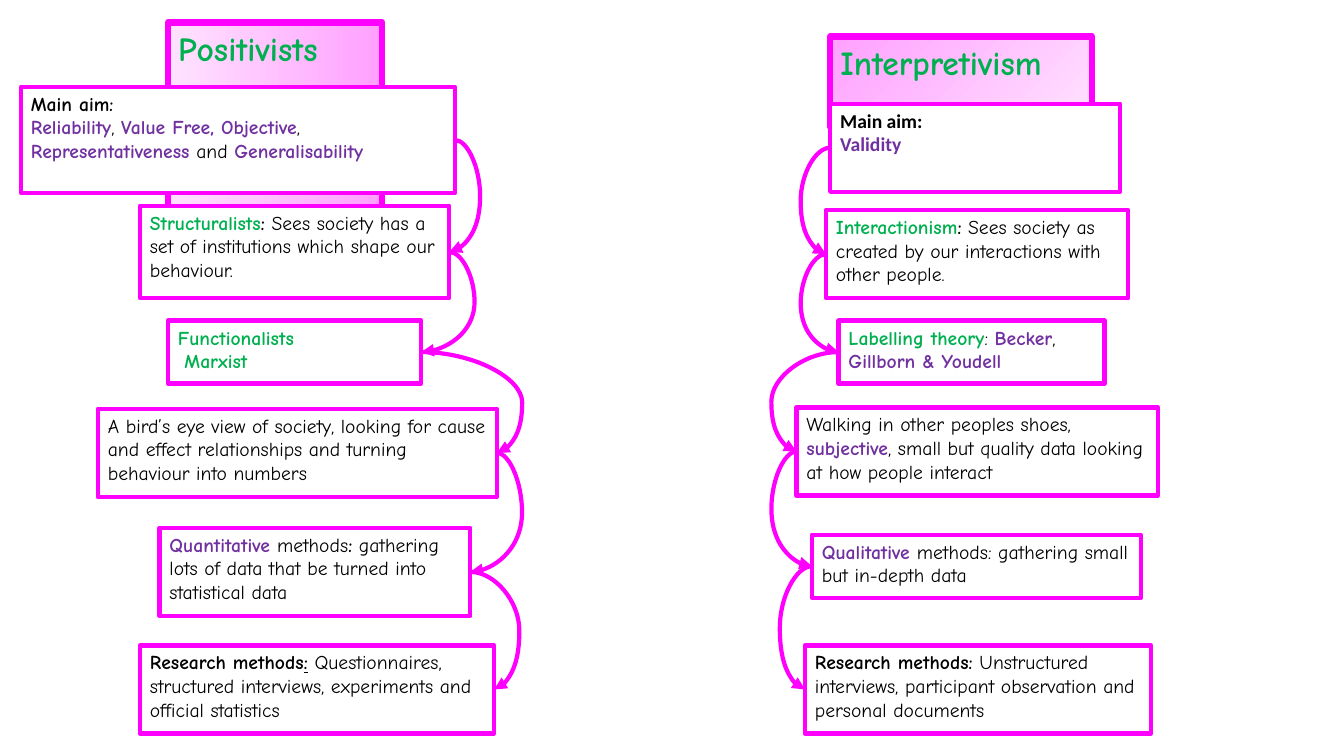
from lxml.etree import SubElement
from pptx import Presentation
from pptx.dml.color import RGBColor
from pptx.enum.shapes import MSO_CONNECTOR as Link, MSO_SHAPE as Geom
from pptx.enum.text import MSO_ANCHOR as Anchor, MSO_AUTO_SIZE as Fit, PP_ALIGN as Align
from pptx.oxml.ns import qn
from pptx.util import Pt

PINK = RGBColor(0xFF, 0x00, 0xFF)
ROSE = RGBColor(0xFF, 0xA0, 0xFF)
PALE = RGBColor(0xFF, 0xE3, 0xFF)
WHITE = RGBColor(0xFF, 0xFF, 0xFF)
BLACK = RGBColor(0x00, 0x00, 0x00)
GREEN = RGBColor(0x00, 0xB0, 0x50)
PURPLE = RGBColor(0x70, 0x30, 0xA0)
COMIC, PLAIN = "Comic Neue", "Calibri"
BULGE = Pt(18)
RIGHT, LEFT = 3, 1

# Run styles: colour, bold
TERM = (GREEN, True)
KEY = (PURPLE, True)
STRONG = (BLACK, True)
BODY = (BLACK, False)
UNDER = (BLACK, True, True)

# Each box: left, top, width, height, font, paragraphs of (text, style) runs
POSITIVE = [
    (15, 62, 310, 76, COMIC, [
        [("Main aim:", STRONG)],
        [("Reliability", KEY), (", ", BODY), ("Value Free, Objective", KEY), (", ", BODY),
         ("Representativeness", KEY), (" and ", BODY), ("Generalisability", KEY)]]),
    (100, 147, 221, 66, COMIC, [
        [("Structuralists", TERM), (":", STRONG),
         (" Sees society has a set of institutions which shape our behaviour.", BODY)]]),
    (120, 229, 181, 45, COMIC, [
        [("Functionalists", TERM)], [(" ", BODY), ("Marxist", TERM)]]),
    (70, 292, 285, 63, COMIC, [
        [("A bird’s eye view of society, looking for cause and effect relationships "
          "and turning behaviour into numbers", BODY)]]),
    (114, 377, 222, 63, COMIC, [
        [("Quantitative ", KEY), ("methods", BODY), (":", STRONG),
         (" gathering lots of data that be turned into statistical data", BODY)]]),
    (100, 461, 253, 63, COMIC, [
        [("Research methods", STRONG), (":", UNDER),
         (" Questionnaires, structured interviews, experiments and official statistics", BODY)]]),
]
INTERPRET = [
    (593, 74, 207, 63, PLAIN, [[("Main aim:", STRONG)], [("Validity", KEY)]]),
    (590, 150, 216, 63, COMIC, [
        [("Interactionism", TERM), (":", STRONG),
         (" Sees society as created by our interactions with other people.", BODY)]]),
    (599, 229, 190, 45, COMIC, [
        [("Labelling theory", TERM), (": ", BODY), ("Becker", KEY), (", ", BODY),
         ("Gillborn & Youdell", KEY)]]),
    (569, 291, 258, 63, COMIC, [
        [("Walking in other peoples shoes, ", BODY), ("subjective", KEY),
         (", small but quality data looking at how people interact", BODY)]]),
    (580, 382, 235, 45, COMIC, [
        [("Qualitative ", KEY), ("methods: gathering small but in-depth data", BODY)]]),
    (575, 461, 247, 63, COMIC, [
        [("Research methods:", STRONG),
         (" Unstructured interviews, participant observation and personal documents", BODY)]]),
]


def place(shape, left, top, width, height):
    shape.left, shape.top = Pt(left), Pt(top)
    shape.width, shape.height = Pt(width), Pt(height)


def outline(shape, width):
    shape.line.color.rgb = PINK
    shape.line.width = Pt(width)


def add_head(holder, text, area, angle):
    """Turn a placeholder into a framed column heading."""
    place(holder, *area)
    outline(holder, 4.5)
    holder.fill.gradient()
    holder.fill.gradient_angle = angle
    for stop, tone in zip(holder.fill.gradient_stops, (ROSE, PALE)):
        stop.color.rgb = tone
    frame = holder.text_frame
    frame.text = text
    frame.auto_size = Fit.SHAPE_TO_FIT_TEXT
    frame.vertical_anchor = Anchor.TOP
    para = frame.paragraphs[0]
    para.alignment = Align.LEFT
    para.space_before = Pt(0)
    font = para.font
    font.name, font.size, font.bold = COMIC, Pt(24), True
    font.color.rgb = GREEN


def add_run(para, text, tone, bold, under=None):
    run = para.add_run()
    run.text = text
    run.font.color.rgb = tone
    run.font.bold = bold
    run.font.underline = under


def add_box(slide, left, top, width, height, face, paras):
    box = slide.shapes.add_shape(Geom.RECTANGLE, Pt(left), Pt(top), Pt(width), Pt(height))
    box.shadow.inherit = False
    box.fill.solid()
    box.fill.fore_color.rgb = WHITE
    outline(box, 3)
    frame = box.text_frame
    frame.word_wrap = True
    frame.vertical_anchor = Anchor.TOP
    for i, runs in enumerate(paras):
        para = frame.add_paragraph() if i else frame.paragraphs[0]
        para.alignment = Align.LEFT
        para.font.name, para.font.size = face, Pt(14)
        for text, style in runs:
            add_run(para, text, *style)
    return box


def add_curve(slide, start, end, side):
    """Join the same side of two boxes with an arrow that bulges outwards."""
    if side == RIGHT:
        x1, x2 = start.left + start.width, end.left + end.width
        bend = max(x1, x2) + BULGE
    else:
        x1, x2 = start.left, end.left
        bend = min(x1, x2) - BULGE
    y1, y2 = (box.top + box.height // 2 for box in (start, end))
    curve = slide.shapes.add_connector(Link.CURVE, x1, y1, x2, y2)
    curve.begin_connect(start, side)
    curve.end_connect(end, side)
    outline(curve, 3)
    # Bend, arrowhead and no shadow
    props = curve._element.spPr
    guides = props.find(qn("a:prstGeom")).find(qn("a:avLst"))
    ratio = round((bend - x1) / (x2 - x1) * 100000)
    SubElement(guides, qn("a:gd"), name="adj1", fmla=f"val {ratio}")
    SubElement(props.find(qn("a:ln")), qn("a:tailEnd"), type="triangle")
    SubElement(props, qn("a:effectLst"))


def add_chain(slide, items, side):
    boxes = [add_box(slide, *item) for item in items]
    for start, end in zip(boxes, boxes[1:]):
        add_curve(slide, start, end, side)


def main():
    deck = Presentation()
    deck.slide_width, deck.slide_height = Pt(960), Pt(540)
    slide = deck.slides.add_slide(deck.slide_layouts[4])

    # Column headings
    add_head(slide.shapes.title, "Positivists", (120, 16, 153, 36), 180)
    add_head(slide.placeholders[1], "Interpretivism", (593, 26, 187, 36), 315)
    for holder in list(slide.placeholders):
        if not holder.text_frame.text:
            holder._element.getparent().remove(holder._element)

    # Linked boxes under each heading
    add_chain(slide, POSITIVE, RIGHT)
    add_chain(slide, INTERPRET, LEFT)
    deck.save("out.pptx")


if __name__ == "__main__":
    main()
